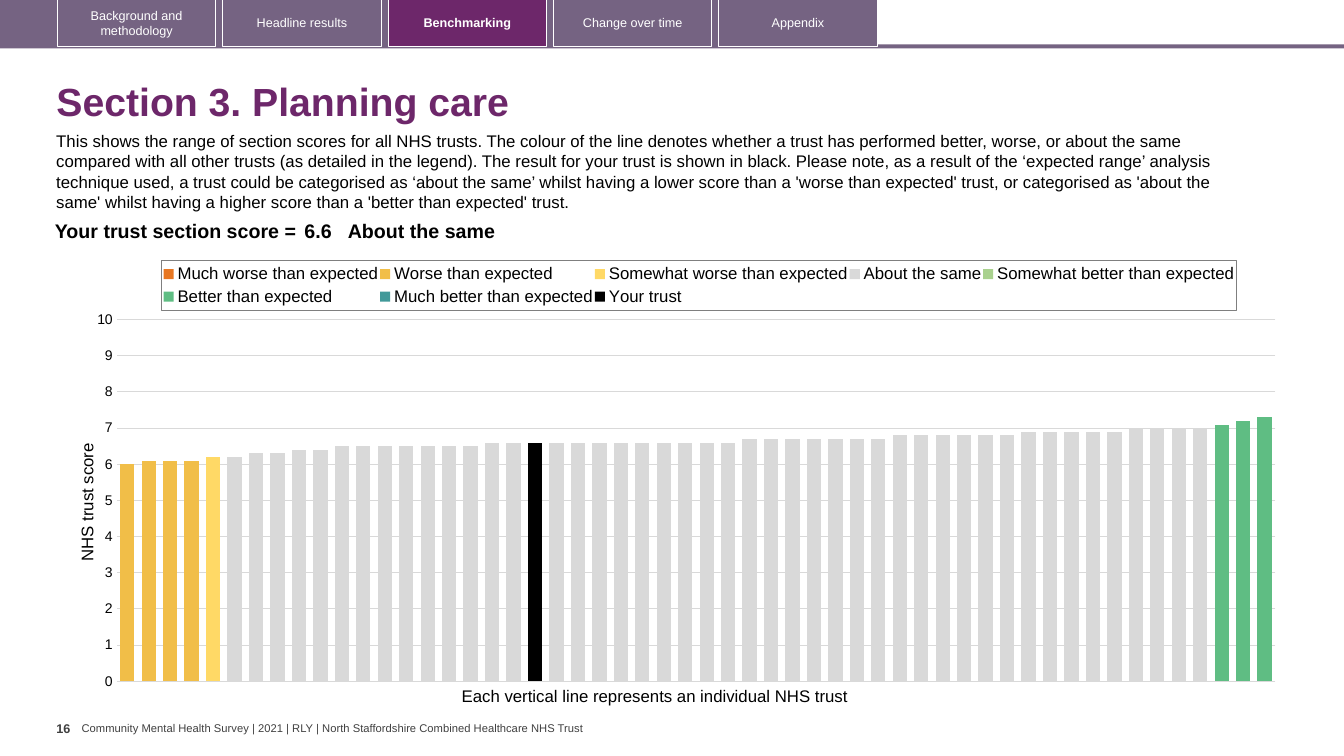
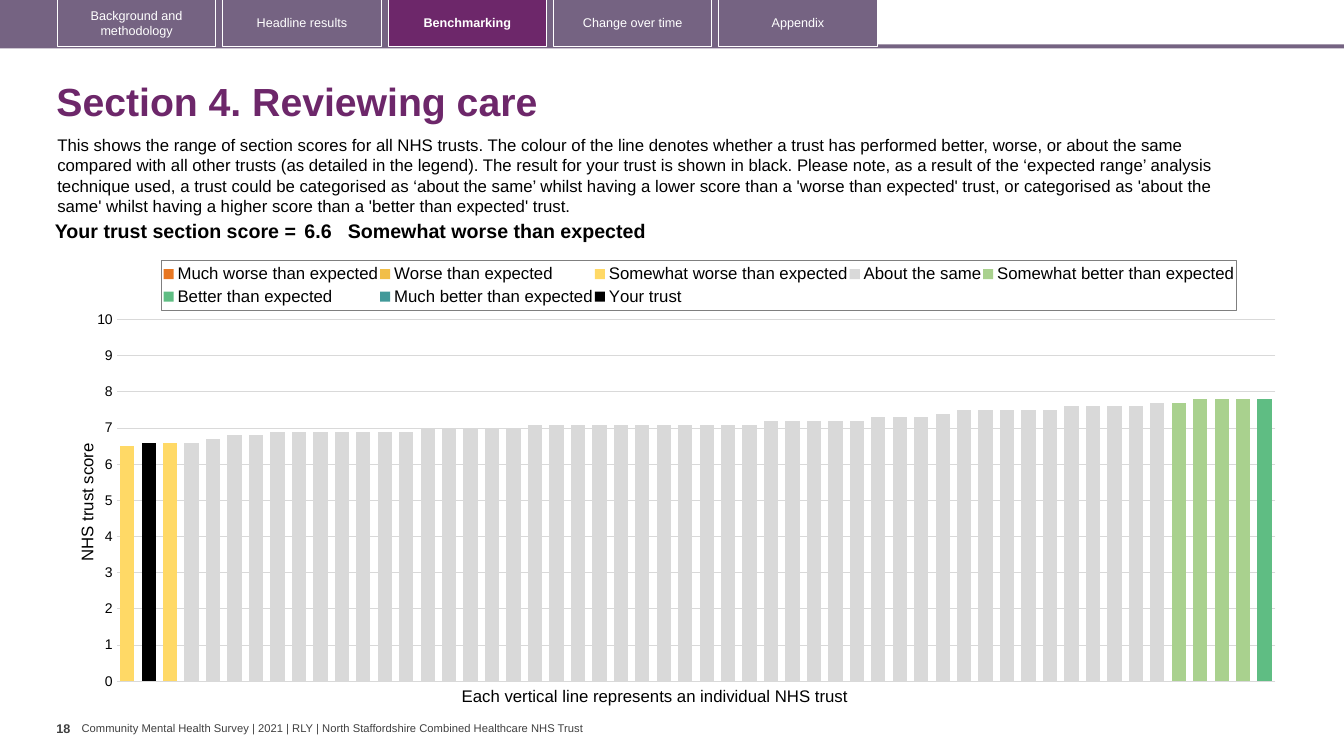
import copy
import dataclasses
import itertools
import typing

import lxml.etree
import pptx
import pptx.chart.data
import pptx.dml.color
import pptx.enum.chart
import pptx.enum.shapes
import pptx.enum.text
import pptx.oxml.ns
import pptx.util

Inches = pptx.util.Inches
Pt = pptx.util.Pt
RGBColor = pptx.dml.color.RGBColor
Align = pptx.enum.text.PP_ALIGN
Anchor = pptx.enum.text.MSO_ANCHOR
qn = pptx.oxml.ns.qn

PLUM = RGBColor(0x6D, 0x27, 0x6A)
MAUVE = RGBColor(0x75, 0x63, 0x82)
WHITE = RGBColor(0xFF, 0xFF, 0xFF)
BLACK = RGBColor(0, 0, 0)
DARK = RGBColor(0x40, 0x40, 0x40)
PALE = RGBColor(0xD9, 0xD9, 0xD9)
FONT = "Arial"

TABS = ("Background and methodology", "Headline results", "Benchmarking",
        "Change over time", "Appendix")
ACTIVE = "Benchmarking"
FOOTER = ("Community Mental Health Survey | 2021 | RLY | "
          "North Staffordshire Combined Healthcare NHS Trust")
INTRO = (
    "This shows the range of section scores for all NHS trusts. The colour of the line "
    "denotes whether a trust has performed better, worse, or about the same compared with "
    "all other trusts (as detailed in the legend). The result for your trust is shown in "
    "black. Please note, as a result of the ‘expected range’ analysis technique used, a "
    "trust could be categorised as ‘about the same’ whilst having a lower score than a "
    "'worse than expected' trust, or categorised as 'about the same' whilst having a higher "
    "score than a 'better than expected' trust."
)


@dataclasses.dataclass(frozen=True)
class Band:
    name: str
    color: RGBColor


WORSE = Band("Worse than expected", RGBColor(0xF1, 0xBE, 0x48))
LOW = Band("Somewhat worse than expected", RGBColor(0xFF, 0xD9, 0x66))
SAME = Band("About the same", PALE)
HIGH = Band("Somewhat better than expected", RGBColor(0xA9, 0xD1, 0x8E))
BETTER = Band("Better than expected", RGBColor(0x5F, 0xBD, 0x83))
BANDS = (
    Band("Much worse than expected", RGBColor(0xE8, 0x77, 0x22)),
    WORSE, LOW, SAME, HIGH, BETTER,
    Band("Much better than expected", RGBColor(0x41, 0x99, 0x99)),
)
OWN = Band("Your trust", BLACK)


@dataclasses.dataclass(frozen=True)
class Page:
    number: str
    title: str
    left: float
    top: float
    result: Band
    own: int
    scores: tuple[tuple[float, int], ...]
    groups: tuple[tuple[Band, int], ...]


PAGES = (
    Page("16", "Section 3. Planning care", 0.46, 1.25, SAME, 19,
         ((6, 1), (6.1, 3), (6.2, 2), (6.3, 2), (6.4, 2), (6.5, 7), (6.6, 12), (6.7, 7),
          (6.8, 6), (6.9, 5), (7, 4), (7.1, 1), (7.2, 1), (7.3, 1)),
         ((WORSE, 4), (LOW, 1), (SAME, 46), (BETTER, 3))),
    Page("18", "Section 4. Reviewing care", 0.47, 1.29, LOW, 1,
         ((6.5, 1), (6.6, 3), (6.7, 1), (6.8, 2), (6.9, 7), (7, 5), (7.1, 11), (7.2, 5),
          (7.3, 3), (7.4, 1), (7.5, 5), (7.6, 4), (7.7, 2), (7.8, 4)),
         ((LOW, 3), (SAME, 46), (HIGH, 4), (BETTER, 1))),
)


def write(frame: typing.Any, words: str, *, size: float = 12, color: RGBColor = BLACK,
          bold: bool = False, align: Align = Align.LEFT, space: float = 1.0) -> None:
    para = frame.paragraphs[0]
    para.alignment = align
    para.line_spacing = space
    run = para.add_run()
    run.text = words
    style(run.font, size, color, bold)


def style(font: typing.Any, size: float, color: RGBColor = BLACK, bold: bool = False) -> None:
    font.name = FONT
    font.size = Pt(size)
    font.bold = bold
    font.color.rgb = color


def inset(item: typing.Any, left: float, top: float, right: float, bottom: float) -> None:
    item.margin_left, item.margin_top = Inches(left), Inches(top)
    item.margin_right, item.margin_bottom = Inches(right), Inches(bottom)


def place(*box: float) -> list[int]:
    return [Inches(side) for side in box]


def label(slide: typing.Any, box: tuple[float, ...], wrap: bool = False) -> typing.Any:
    frame = slide.shapes.add_textbox(*place(*box)).text_frame
    frame.word_wrap = wrap
    return frame


def block(slide: typing.Any, box: tuple[float, ...], fill: RGBColor | None,
          line: RGBColor | None = None) -> typing.Any:
    shape = slide.shapes.add_shape(pptx.enum.shapes.MSO_SHAPE.RECTANGLE, *place(*box))
    shape.shadow.inherit = False
    if fill is None:
        shape.fill.background()
    else:
        shape.fill.solid()
        shape.fill.fore_color.rgb = fill
    if line is None:
        shape.line.fill.background()
    else:
        shape.line.color.rgb = line
        shape.line.width = Pt(0.75)
    return shape


def frame_page(slide: typing.Any, page: Page) -> None:
    foot = label(slide, (0.81, 7.16, 5.05, 0.13))
    inset(foot, 0, 0, 0, 0)
    foot.vertical_anchor = Anchor.MIDDLE
    write(foot, FOOTER, size=8, color=DARK)
    block(slide, (-0.03, 0.44, 13.36, 0.04), MAUVE)
    block(slide, (-0.03, 0, 8.73, 0.47), MAUVE)
    for spot, name in enumerate(TABS):
        live = name == ACTIVE
        tab = block(slide, (0.57 + spot * 1.64, -0.01, 1.57, 0.47),
                    PLUM if live else None, WHITE)
        tab.text_frame.word_wrap = True
        tab.text_frame.vertical_anchor = Anchor.MIDDLE
        write(tab.text_frame, name, size=9, color=WHITE, bold=live, align=Align.CENTER)
    folio = label(slide, (0.56, 7.1, 0.25, 0.4))
    inset(folio, 0, 0.05, 0, 0.05)
    write(folio, page.number, size=9, color=DARK, bold=True)

    title = slide.shapes.title
    title.left, title.top, title.width, title.height = place(0.46, 0.67, 12.49, 0.72)
    title.text_frame.auto_size = pptx.enum.text.MSO_AUTO_SIZE.NONE
    title.text_frame.vertical_anchor = Anchor.MIDDLE
    write(title.text_frame, page.title, size=28, color=PLUM, bold=True, space=0.9)


def fix(host: typing.Any, index: int, inner: bool = False, **spots: float) -> None:
    old = host.find(qn("c:layout"))
    if old is not None:
        host.remove(old)
    layout = host.makeelement(qn("c:layout"))
    host.insert(index, layout)
    manual = lxml.etree.SubElement(layout, qn("c:manualLayout"))
    if inner:
        lxml.etree.SubElement(manual, qn("c:layoutTarget")).set("val", "inner")
    for key in spots:
        if key in "xy":
            lxml.etree.SubElement(manual, qn(f"c:{key}Mode")).set("val", "edge")
    for key, value in spots.items():
        lxml.etree.SubElement(manual, qn(f"c:{key}")).set("val", str(value))


def split(area: typing.Any) -> None:
    bars = area.find(qn("c:barChart"))
    extra = copy.deepcopy(bars)
    bars.remove(bars.findall(qn("c:ser"))[-1])
    for series in extra.findall(qn("c:ser"))[:-1]:
        extra.remove(series)
    bars.addnext(extra)
    value = area.find(qn("c:valAx"))
    twins = [copy.deepcopy(value), copy.deepcopy(area.find(qn("c:catAx")))]
    value.addnext(twins[0])
    twins[0].addnext(twins[1])
    ids = {axis.find(qn("c:axId")).get("val"): str(101 + spot)
           for spot, axis in enumerate(twins)}
    for host in (extra, *twins):
        for node in host.findall(qn("c:axId")) + host.findall(qn("c:crossAx")):
            node.set("val", ids[node.get("val")])
    for tag in ("c:majorGridlines", "c:title"):
        twins[0].remove(twins[0].find(qn(tag)))
    for tag, choice in (("c:axPos", "r"), ("c:tickLblPos", "none"), ("c:crosses", "max")):
        twins[0].find(qn(tag)).set("val", choice)


def plot(slide: typing.Any, page: Page) -> None:
    scores = [score for score, count in page.scores for _ in range(count)]
    owners = list(itertools.chain.from_iterable(
        itertools.repeat(band, count) for band, count in page.groups))
    data = pptx.chart.data.CategoryChartData()
    data.categories = [str(rank + 1) for rank in range(len(scores))]
    for band in BANDS:
        data.add_series(band.name, [score if owner == band else None
                                    for score, owner in zip(scores, owners)])
    data.add_series(OWN.name, [score if rank == page.own else None
                               for rank, score in enumerate(scores)])
    kinds = pptx.enum.chart
    chart = slide.shapes.add_chart(kinds.XL_CHART_TYPE.COLUMN_CLUSTERED,
                                   *place(0.67, 2.47, 12.15, 4.44), data).chart
    chart.has_title = False
    chart.font.name = "Calibri"
    chart.font.size = Pt(10)
    chart.font.color.rgb = BLACK
    bars = chart.plots[0]
    bars.gap_width, bars.overlap = 50, 100
    bars.vary_by_categories = False
    for series, band in zip(bars.series, (*BANDS, OWN)):
        series.invert_if_negative = False
        series.format.fill.solid()
        series.format.fill.fore_color.rgb = band.color

    chart.category_axis.visible = False
    axis = chart.value_axis
    axis.minimum_scale, axis.maximum_scale, axis.major_unit = 0, 10, 1
    axis.major_tick_mark = kinds.XL_TICK_MARK.NONE
    axis.format.line.fill.background()
    axis.major_gridlines.format.line.color.rgb = PALE
    axis.major_gridlines.format.line.width = Pt(0.75)
    axis.tick_labels.number_format = "General"
    axis.tick_labels.number_format_is_linked = False
    style(axis.tick_labels.font, 10)
    write(axis.axis_title.text_frame, "NHS trust score")

    chart.has_legend = True
    chart.legend.position = kinds.XL_LEGEND_POSITION.TOP
    chart.legend.include_in_layout = False
    style(chart.legend.font, 12)

    root = chart.element
    area = root.find(".//" + qn("c:plotArea"))
    name = area.find(qn("c:valAx")).find(qn("c:title"))
    name.find(".//" + qn("a:bodyPr")).set("rot", "-5400000")
    fix(name, 1, x=0.005, y=0.427)
    fix(area, 0, inner=True, x=0.04, y=0.158, w=0.946, h=0.808)
    key = root.find(".//" + qn("c:legend"))
    fix(key, 1, x=0.077, y=0.026, w=0.877, h=0.111)
    look = key.makeelement(qn("c:spPr"))
    key.find(qn("c:txPr")).addprevious(look)
    edge = lxml.etree.SubElement(look, qn("a:ln"), w=str(Pt(0.75)))
    paint = lxml.etree.SubElement(edge, qn("a:solidFill"))
    lxml.etree.SubElement(paint, qn("a:srgbClr"), val="7F7F7F")
    split(area)


def score_row(slide: typing.Any, page: Page) -> None:
    table = slide.shapes.add_table(1, 3, *place(0.35, 2.15, 11.7, 0.31)).table
    table.first_row = table.horz_banding = False
    parts = (("Your trust section score =", 2.63, 0.04, Align.RIGHT),
             ("6.6", 0.47, 0.04, Align.LEFT),
             (page.result.name, 8.59, 0, Align.LEFT))
    for spot, (words, width, side, align) in enumerate(parts):
        table.columns[spot].width = Inches(width)
        cell = table.cell(0, spot)
        cell.fill.background()
        inset(cell, side, 0.04, side, 0.04)
        write(cell.text_frame, words, size=14, bold=True, align=align)


def main() -> None:
    deck = pptx.Presentation()
    deck.slide_width, deck.slide_height = place(13.33, 7.5)
    for page in PAGES:
        slide = deck.slides.add_slide(deck.slide_layouts[5])
        frame_page(slide, page)
        write(label(slide, (page.left, page.top, 12.13, 0.91), wrap=True), INTRO)
        write(label(slide, (4.48, 6.75, 4.11, 0.3)),
              "Each vertical line represents an individual NHS trust")
        plot(slide, page)
        score_row(slide, page)
    deck.save("out.pptx")


if __name__ == "__main__":
    main()
